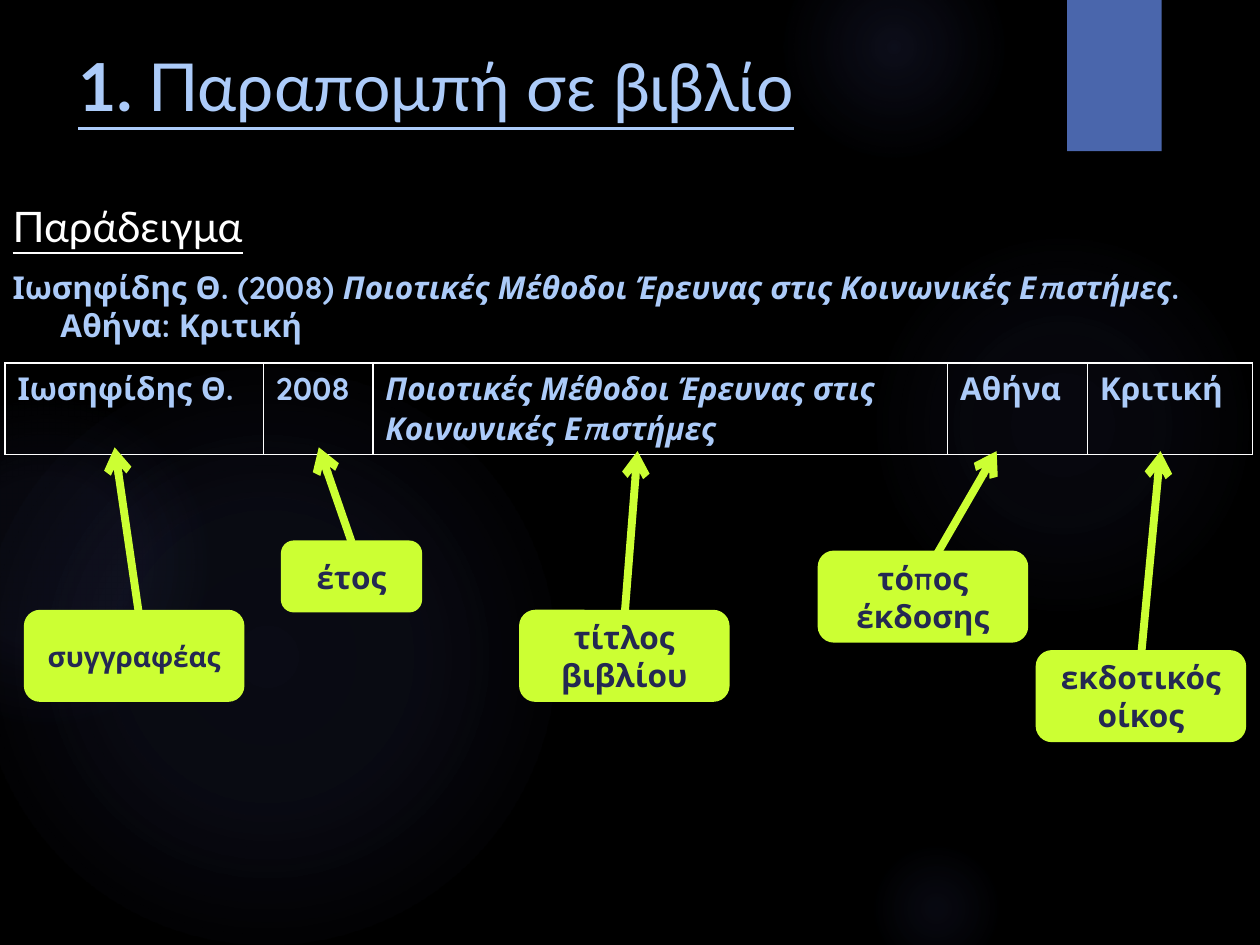
"""Build a slide that explains the parts of a book citation."""
from dataclasses import dataclass

from lxml import etree
from pptx import Presentation
from pptx.dml.color import RGBColor
from pptx.enum.shapes import MSO_CONNECTOR, MSO_SHAPE
from pptx.enum.text import MSO_ANCHOR, MSO_AUTO_SIZE, PP_ALIGN
from pptx.oxml import parse_xml
from pptx.oxml.ns import nsdecls, qn
from pptx.util import Inches, Pt

LEFT, CENTER = PP_ALIGN.LEFT, PP_ALIGN.CENTER
TOP, MIDDLE = MSO_ANCHOR.TOP, MSO_ANCHOR.MIDDLE
NO_AUTOFIT = MSO_AUTO_SIZE.NONE
STRAIGHT = MSO_CONNECTOR.STRAIGHT
OVAL, RECTANGLE = MSO_SHAPE.OVAL, MSO_SHAPE.RECTANGLE
LABEL_BOX = MSO_SHAPE.FLOWCHART_ALTERNATE_PROCESS


@dataclass(frozen=True)
class Theme:
    background: str = "000000"
    glow: str = "5C64B7"
    ribbon: str = "4A66AC"
    accent: str = "ACCBF9"
    white: str = "FFFFFF"
    lime: str = "CCFF33"
    navy: str = "242852"
    heading_font: str = "Lato"
    text_font: str = "Quicksand"
    title_size: float = 37.8
    example_size: float = 24
    text_size: float = 18
    small_size: float = 16


@dataclass(frozen=True)
class Glow:
    left: float
    top: float
    diameter: float
    stops: tuple[tuple[int, int], ...]


@dataclass(frozen=True)
class Label:
    text: str
    box: tuple[float, float, float, float]
    start: tuple[float, float]
    tip: tuple[float, float]
    size: float


@dataclass(frozen=True)
class CitationPart:
    text: str
    width: float
    italic: bool = False


THEME = Theme()
BOOK_TITLE = "Ποιοτικές Μέθοδοι Έρευνας στις Κοινωνικές Επιστήμες"
GLOWS = (
    Glow(6.89, 1.83, 3.08, ((0, 7), (36, 6), (69, 0))),
    Glow(6.22, -0.5, 1.75, ((0, 14), (36, 7), (73, 0))),
    Glow(6.89, 6.67, 1.08, ((0, 9), (36, 5), (66, 0))),
    Glow(-0.17, 2.92, 4.58, ((0, 11), (36, 10), (75, 0))),
    Glow(-0.92, 3.17, 2.58, ((0, 8), (36, 8), (72, 0))),
)
PARTS = (
    CitationPart("Ιωσηφίδης Θ.", 2.05),
    CitationPart("2008", 0.87),
    CitationPart(BOOK_TITLE, 4.56, italic=True),
    CitationPart("Αθήνα", 1.11),
    CitationPart("Κριτική", 1.31),
)
LABELS = (
    Label("συγγραφέας", (0.2, 4.85, 1.73, 0.71), (1.14, 5.13), (0.91, 3.55), THEME.small_size),
    Label("έτος", (2.24, 4.3, 1.1, 0.55), (2.79, 4.3), (2.53, 3.55), THEME.text_size),
    Label("τίτλος βιβλίου", (4.13, 4.85, 1.65, 0.71), (4.96, 4.85), (5.06, 3.58), THEME.text_size),
    Label("τόπος έκδοσης", (6.5, 4.38, 1.65, 0.71), (7.4, 4.46), (7.91, 3.58), THEME.text_size),
    Label("εκδοτικός οίκος", (8.23, 5.17, 1.65, 0.71), (9.06, 5.17), (9.21, 3.58), THEME.text_size),
)


def rgb(color: str) -> RGBColor:
    return RGBColor.from_string(color)


def style_run(run, font: str, size: float, color: str, bold=False, italic=False, underline=False) -> None:
    run.font.name, run.font.size = font, Pt(size)
    run.font.color.rgb = rgb(color)
    run.font.bold, run.font.italic, run.font.underline = bold, italic, underline


def add_run(paragraph, text: str):
    run = paragraph.add_run()
    run.text = text
    return run


def place(shape, left: float, top: float, width: float, height: float) -> None:
    shape.left, shape.top = Inches(left), Inches(top)
    shape.width, shape.height = Inches(width), Inches(height)


def add_plain_shape(slide, kind, box: tuple[float, float, float, float], color: str):
    shape = slide.shapes.add_shape(kind, *map(Inches, box))
    shape.shadow.inherit = False
    shape.fill.solid()
    shape.fill.fore_color.rgb = rgb(color)
    shape.line.fill.background()
    return shape


def add_glow(slide, glow: Glow) -> None:
    oval = add_plain_shape(slide, OVAL, (glow.left, glow.top, glow.diameter, glow.diameter), THEME.glow)
    stops = "".join(
        f'<a:gs pos="{position * 1000}"><a:srgbClr val="{THEME.glow}">'
        f'<a:alpha val="{opacity * 1000}"/></a:srgbClr></a:gs>'
        for position, opacity in glow.stops
    )
    gradient = parse_xml(
        f'<a:gradFill {nsdecls("a")} rotWithShape="1"><a:gsLst>{stops}</a:gsLst><a:path path="circle">'
        '<a:fillToRect l="50000" t="50000" r="50000" b="50000"/></a:path></a:gradFill>'
    )
    properties = oval._element.spPr
    properties.replace(properties.find(qn("a:solidFill")), gradient)


def fill_title(title) -> None:
    place(title, 0.52, 0.27, 7.72, 0.81)
    frame = title.text_frame
    frame.auto_size, frame.vertical_anchor = NO_AUTOFIT, MIDDLE
    paragraph = frame.paragraphs[0]
    paragraph.alignment = LEFT
    for text, bold in (("1. ", True), ("Παραπομπή σε βιβλίο", False)):
        style_run(add_run(paragraph, text), THEME.heading_font, THEME.title_size, THEME.accent,
                  bold=bold, underline=True)


def fill_body(body) -> None:
    place(body, 0, 0.99, 10, 1.65)
    frame = body.text_frame
    frame.auto_size, frame.vertical_anchor = NO_AUTOFIT, TOP
    frame.margin_top = Inches(0.6)
    example, citation = frame.paragraphs[0], frame.add_paragraph()
    for paragraph, space in ((example, 0), (citation, 10)):
        paragraph.space_before = Pt(space)
        properties = paragraph._p.get_or_add_pPr()
        properties.set("marL", str(Inches(0.38)))
        properties.set("indent", str(Inches(-0.38)))
        etree.SubElement(properties, qn("a:buNone"))
    style_run(add_run(example, "Παράδειγμα"), THEME.heading_font, THEME.example_size, THEME.white, underline=True)
    pieces = (("Ιωσηφίδης Θ. (2008) ", False), (BOOK_TITLE, True), (". Αθήνα: Κριτική", False))
    for text, italic in pieces:
        style_run(add_run(citation, text), THEME.text_font, THEME.text_size, THEME.accent, bold=True, italic=italic)


def add_parts_table(slide, parts: tuple[CitationPart, ...]) -> None:
    total = sum(part.width for part in parts)
    table = slide.shapes.add_table(1, len(parts), Inches(0.04), Inches(2.88), Inches(total), Inches(0.7)).table
    table.first_row = table.horz_banding = False
    for index, part in enumerate(parts):
        table.columns[index].width = Inches(part.width)
        cell = table.cell(0, index)
        cell.text_frame.text = part.text
        style_run(cell.text_frame.paragraphs[0].runs[0], THEME.text_font, THEME.text_size, THEME.accent,
                  bold=True, italic=part.italic)
        cell.fill.background()
        for position, side in enumerate(("lnL", "lnR", "lnT", "lnB")):
            border = parse_xml(
                f'<a:{side} {nsdecls("a")} w="{Pt(1)}"><a:solidFill>'
                f'<a:srgbClr val="{THEME.white}"/></a:solidFill></a:{side}>'
            )
            cell._tc.get_or_add_tcPr().insert(position, border)


def add_label(slide, label: Label) -> None:
    box = add_plain_shape(slide, LABEL_BOX, label.box, THEME.lime)
    box.line.color.rgb, box.line.width = rgb(THEME.lime), Pt(1.5)
    frame = box.text_frame
    frame.word_wrap, frame.vertical_anchor = True, MIDDLE
    frame.text = label.text
    frame.paragraphs[0].alignment = CENTER
    style_run(frame.paragraphs[0].runs[0], THEME.text_font, label.size, THEME.navy, bold=True)
    arrow = slide.shapes.add_connector(STRAIGHT, *map(Inches, label.start + label.tip))
    arrow.line.color.rgb, arrow.line.width = rgb(THEME.lime), Pt(4.5)
    etree.SubElement(arrow.line._get_or_add_ln(), qn("a:tailEnd"), type="arrow")
    etree.SubElement(arrow._element.spPr, qn("a:effectLst"))


def main() -> None:
    presentation = Presentation()
    presentation.slide_width, presentation.slide_height = Inches(10), Inches(7.5)
    slide = presentation.slides.add_slide(presentation.slide_layouts[1])
    slide.background.fill.solid()
    slide.background.fill.fore_color.rgb = rgb(THEME.background)
    title, body = slide.placeholders
    for glow in GLOWS:
        add_glow(slide, glow)
    add_plain_shape(slide, RECTANGLE, (8.47, 0, 0.75, 1.2), THEME.ribbon)
    for placeholder in (title, body):
        slide.shapes._spTree.append(placeholder._element)
    fill_title(title)
    fill_body(body)
    add_parts_table(slide, PARTS)
    for label in LABELS:
        add_label(slide, label)
    presentation.save("out.pptx")


if __name__ == "__main__":
    main()
